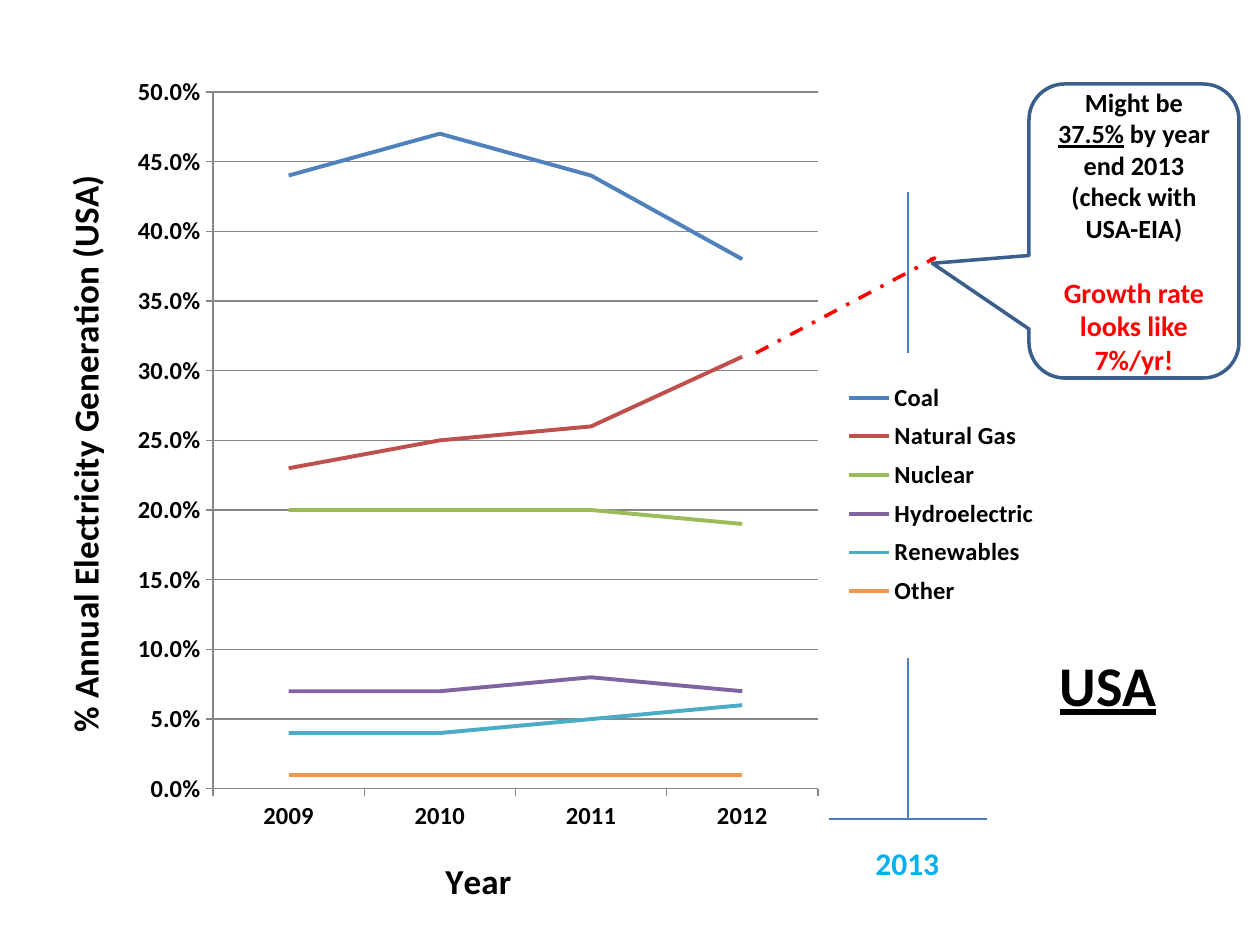
from lxml import etree
from pptx import Presentation
from pptx import util as u
from pptx.chart.data import CategoryChartData
from pptx.dml.color import RGBColor
from pptx.enum import chart as ch, dml, shapes, text
from pptx.oxml.ns import qn

PX = 914400 / 126
FONT = "Calibri"
BLACK = RGBColor(0x00, 0x00, 0x00)
WHITE = RGBColor(0xFF, 0xFF, 0xFF)
RED = RGBColor(0xFF, 0x00, 0x00)
SKY = RGBColor(0x00, 0xB0, 0xF0)
GUIDE = RGBColor(0x4B, 0x7E, 0xBC)
OUTLINE = RGBColor(0x3A, 0x5F, 0x8C)
AXIS = RGBColor(0x86, 0x86, 0x86)

YEARS = ["2009", "2010", "2011", "2012"]
SOURCES = [
    ("Coal", RGBColor(0x4F, 0x81, 0xBD), (0.44, 0.47, 0.44, 0.38)),
    ("Natural Gas", RGBColor(0xC0, 0x50, 0x4D), (0.23, 0.25, 0.26, 0.31)),
    ("Nuclear", RGBColor(0x9B, 0xBB, 0x59), (0.2, 0.2, 0.2, 0.19)),
    ("Hydroelectric", RGBColor(0x80, 0x64, 0xA2), (0.07, 0.07, 0.08, 0.07)),
    ("Renewables", RGBColor(0x4B, 0xAC, 0xC6), (0.04, 0.04, 0.05, 0.06)),
    ("Other", RGBColor(0xF7, 0x96, 0x46), (0.01, 0.01, 0.01, 0.01)),
]
CHART_BOX = (31, 59, 1017, 876)


def px(*values):
    return [u.Emu(round(v * PX)) for v in values]


def style_font(font, size, color=BLACK, bold=True, underline=None):
    font.name = FONT
    font.size = u.Pt(size)
    font.bold = bold
    font.underline = underline
    font.color.rgb = color


def add_run(p, words, **style):
    r = p.add_run()
    r.text = words
    style_font(r.font, **style)


def add_label(slide, box, words, align=text.PP_ALIGN.LEFT, **style):
    tf = slide.shapes.add_textbox(*px(*box)).text_frame
    tf.word_wrap = True
    tf.auto_size = text.MSO_AUTO_SIZE.SHAPE_TO_FIT_TEXT
    p = tf.paragraphs[0]
    p.alignment = align
    add_run(p, words, **style)


def add_guide(slide, *ends):
    line = slide.shapes.add_connector(shapes.MSO_CONNECTOR.STRAIGHT, *px(*ends))
    line.line.color.rgb = GUIDE
    line.line.width = u.Pt(0.75)
    etree.SubElement(line._element.spPr, qn("a:effectLst"))


def place(element, index, x, y, *size):
    """Fix a chart part at a slide position, with an optional width and height."""
    for old in element.findall(qn("c:layout")):
        element.remove(old)
    layout = etree.Element(qn("c:layout"))
    manual = etree.SubElement(layout, qn("c:manualLayout"))
    if element.tag == qn("c:plotArea"):
        etree.SubElement(manual, qn("c:layoutTarget")).set("val", "inner")
    for mode in ("xMode", "yMode"):
        etree.SubElement(manual, qn(f"c:{mode}")).set("val", "edge")
    left, top, width, height = CHART_BOX
    lengths = (x - left, y - top, *size)
    for name, length, whole in zip("xywh", lengths, (width, height) * 2):
        etree.SubElement(manual, qn(f"c:{name}")).set("val", str(length / whole))
    element.insert(index, layout)


def format_axis(axis, title, x, y):
    p = axis.axis_title.text_frame.paragraphs[0]
    add_run(p, title, size=20)
    place(axis.axis_title._element, 1, x, y)
    style_font(axis.tick_labels.font, 14)
    axis.major_tick_mark = ch.XL_TICK_MARK.OUTSIDE
    axis.minor_tick_mark = ch.XL_TICK_MARK.NONE
    axis.format.line.color.rgb = AXIS
    axis.format.line.width = u.Pt(0.75)


def add_generation_chart(slide):
    data = CategoryChartData(number_format="0.0%")
    data.categories = YEARS
    for name, _, shares in SOURCES:
        data.add_series(name, shares)
    chart = slide.shapes.add_chart(ch.XL_CHART_TYPE.LINE, *px(*CHART_BOX), data).chart
    style_font(chart.font, 10, bold=False)
    chart.has_title = False
    chart.plots[0].vary_by_categories = False
    for series, (_, color, _) in zip(chart.plots[0].series, SOURCES):
        series.smooth = False
        series.marker.style = ch.XL_MARKER_STYLE.NONE
        series.format.line.color.rgb = color
        series.format.line.width = u.Pt(2.25)

    format_axis(chart.category_axis, "Year", 439, 850)
    values = chart.value_axis
    format_axis(values, "% Annual Electricity Generation (USA)", 54, 169)
    values.minimum_scale, values.maximum_scale, values.major_unit = 0, 0.5, 0.05
    values.tick_labels.number_format = "0.0%"
    values.tick_labels.number_format_is_linked = False
    values.has_major_gridlines = True
    values.major_gridlines.format.line.color.rgb = AXIS
    values.major_gridlines.format.line.width = u.Pt(0.75)

    chart.has_legend = True
    legend = chart.legend
    legend.position = ch.XL_LEGEND_POSITION.RIGHT
    legend.include_in_layout = False
    style_font(legend.font, 14)
    place(legend._element, 1, 845, 374, 193, 241)
    place(chart._chartSpace.chart.plotArea, 0, 213, 92, 605, 697)


def add_projection(slide):
    """Draw the dashed gas trend on to 2013."""
    builder = slide.shapes.build_freeform(756, 353, scale=PX)
    builder.add_line_segments([(935, 258), (926, 261), (925, 263)], close=False)
    sp = builder.convert_to_shape()
    sp.shadow.inherit = False
    sp.fill.background()
    sp.line.color.rgb = RED
    sp.line.width = u.Pt(2)
    sp.line.dash_style = dml.MSO_LINE.DASH_DOT


def add_callout(slide):
    sp = slide.shapes.add_shape(
        shapes.MSO_SHAPE.ROUNDED_RECTANGULAR_CALLOUT, *px(1029, 84, 210, 294))
    for i, value in enumerate((-0.96, 0.11, 0.17)):
        sp.adjustments[i] = value
    sp.shadow.inherit = False
    sp.fill.solid()
    sp.fill.fore_color.rgb = WHITE
    sp.line.color.rgb = OUTLINE
    sp.line.width = u.Pt(2)
    tf = sp.text_frame
    tf.word_wrap = True
    tf.vertical_anchor = text.MSO_ANCHOR.MIDDLE
    estimate, growth, rate = tf.paragraphs[0], tf.add_paragraph(), tf.add_paragraph()
    for p in (estimate, growth, rate):
        p.alignment = text.PP_ALIGN.CENTER
    add_run(estimate, "Might be ", size=15)
    add_run(estimate, "37.5%", size=15, underline=True)
    add_run(estimate, " by year end 2013 (check with USA-EIA)", size=15)
    growth.space_before = u.Pt(18)
    add_run(growth, "Growth rate looks like", size=16, color=RED)
    add_run(rate, "7%/yr!", size=16, color=RED)


def main():
    prs = Presentation()
    prs.slide_width, prs.slide_height = px(1260, 945)
    slide = prs.slides.add_slide(prs.slide_layouts[6])
    add_generation_chart(slide)
    add_projection(slide)
    add_guide(slide, 829, 819, 987, 819)
    add_guide(slide, 908, 819, 908, 658)
    add_label(slide, (863, 838, 95, 50), "2013", size=18, color=SKY)
    add_guide(slide, 908, 353, 908, 192)
    add_callout(slide)
    add_label(slide, (998, 644, 220, 81), "USA", text.PP_ALIGN.CENTER,
              size=32, underline=True)
    prs.save("out.pptx")


if __name__ == "__main__":
    main()
